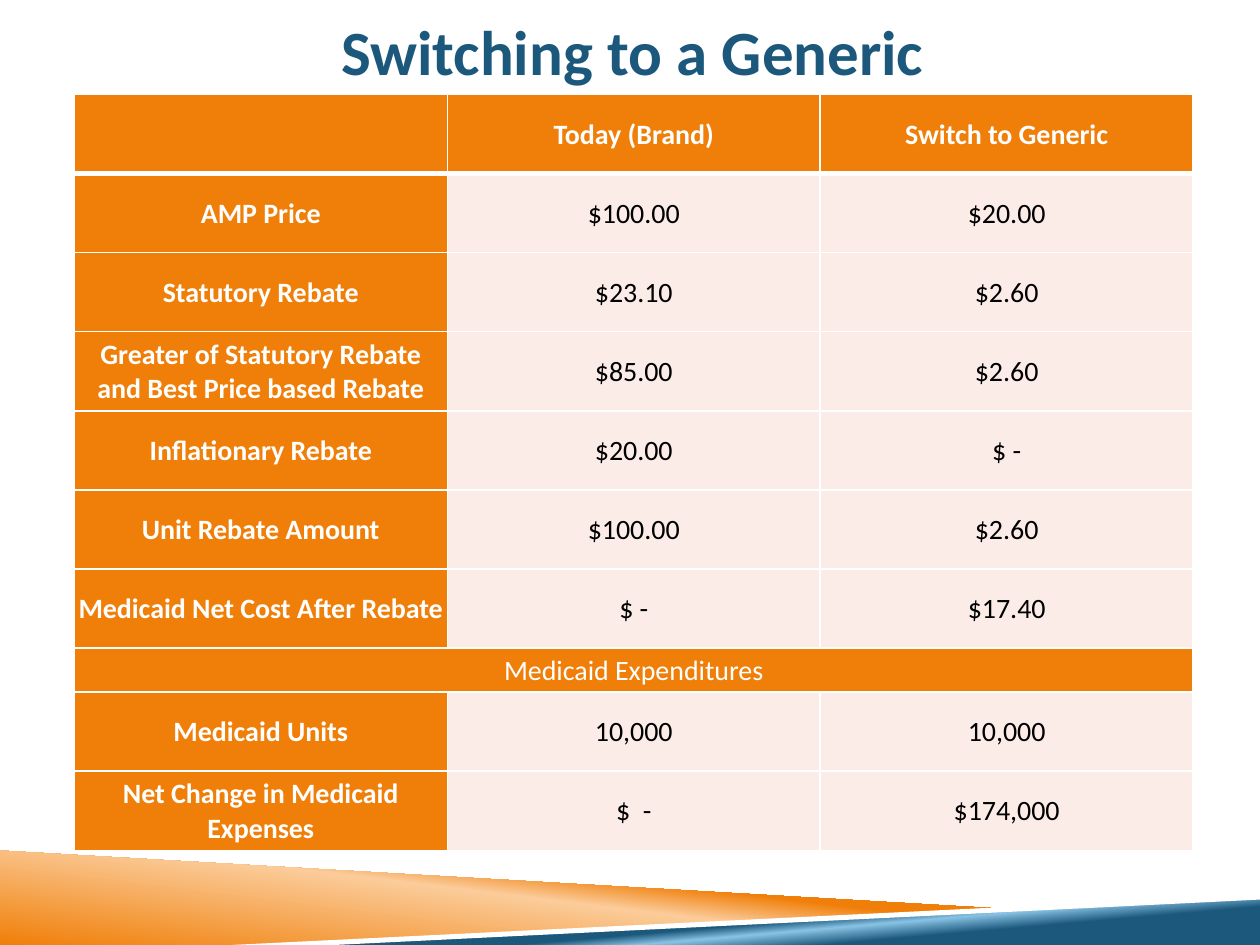
from dataclasses import dataclass

from lxml.etree import SubElement
from pptx import Presentation
from pptx.dml.color import RGBColor
from pptx.enum.text import MSO_ANCHOR, PP_ALIGN
from pptx.oxml import parse_xml
from pptx.oxml.ns import nsdecls, qn
from pptx.util import Inches, Pt


@dataclass(frozen=True)
class Theme:
    font: str = "Calibri"
    title_size: int = 36
    table_size: int = 16
    orange: str = "F07F09"
    peach: str = "FBCC9A"
    navy: str = "1B587C"
    sky: str = "89C3E5"
    blush: str = "FCECE7"
    white: str = "FFFFFF"
    black: str = "000000"


THEME = Theme()


def write(frame, text, *, size, color, bold=False):
    paragraph = frame.paragraphs[0]
    paragraph.alignment = PP_ALIGN.CENTER
    run = paragraph.add_run()
    run.text = text
    run.font.name = THEME.font
    run.font.size = Pt(size)
    run.font.bold = bold
    run.font.color.rgb = RGBColor.from_string(color)


def set_borders(cell, **widths):
    """Draw white cell borders; widths in points are keyed L, R, T and B."""
    properties = cell._tc.get_or_add_tcPr()
    for side, width in widths.items():
        line = SubElement(properties, qn(f"a:ln{side}"), w=str(Pt(width)))
        fill = SubElement(line, qn("a:solidFill"))
        SubElement(fill, qn("a:srgbClr"), val=THEME.white)


prs = Presentation()
prs.slide_width, prs.slide_height = Inches(10), Inches(7.5)
slide = prs.slides.add_slide(prs.slide_layouts[6])

# Footer wedges: outline, gradient stops (percent, colour), angle
wedges = [
    ([(0, 6.75), (7.92, 7.21), (2, 7.5), (0, 7.5)],
     [(0, THEME.orange), (52, THEME.peach), (66, THEME.orange)], 277),
    ([(1.98, 7.5), (10, 7.12), (10, 7.5)],
     [(28, THEME.navy), (40, THEME.sky), (48, THEME.navy)], 265),
    ([(10, 7.1), (1.84, 7.5), (2.66, 7.5), (10, 7.14)],
     [(0, THEME.white)], 0),
]
for outline, stops, angle in wedges:
    start, *others = [(Inches(x), Inches(y)) for x, y in outline]
    builder = slide.shapes.build_freeform(*start)
    builder.add_line_segments(others, close=True)
    wedge = builder.convert_to_shape()
    wedge.shadow.inherit = False
    wedge.line.fill.background()
    if len(stops) == 1:
        wedge.fill.solid()
        wedge.fill.fore_color.rgb = RGBColor.from_string(stops[0][1])
        continue
    stop_xml = "".join(
        f'<a:gs pos="{percent * 1000}"><a:srgbClr val="{color}"/></a:gs>'
        for percent, color in stops)
    gradient = parse_xml(
        f'<a:gradFill {nsdecls("a")} rotWithShape="1"><a:gsLst>{stop_xml}</a:gsLst>'
        f'<a:lin ang="{angle * 60000}" scaled="0"/></a:gradFill>')
    wedge._element.spPr.find(qn("a:custGeom")).addnext(gradient)

title = slide.shapes.add_textbox(
    Inches(0.71), Inches(-0.08), Inches(8.62), Inches(0.96)).text_frame
title.word_wrap = True
title.vertical_anchor = MSO_ANCHOR.MIDDLE
title.margin_left = title.margin_right = 0
write(title, "Switching to a Generic", size=THEME.title_size,
      color=THEME.navy, bold=True)

SECTION = "Medicaid Expenditures"
rows = [
    ("", "Today (Brand)", "Switch to Generic"),
    ("AMP Price", "$100.00", "$20.00"),
    ("Statutory Rebate", "$23.10", "$2.60"),
    ("Greater of Statutory Rebate and Best Price based Rebate", "$85.00", "$2.60"),
    ("Inflationary Rebate", "$20.00", "$ -"),
    ("Unit Rebate Amount", "$100.00", "$2.60"),
    ("Medicaid Net Cost After Rebate", "$ -", "$17.40"),
    (SECTION, "", ""),
    ("Medicaid Units", "10,000", "10,000"),
    ("Net Change in Medicaid Expenses", "$  -", "$174,000"),
]
table_height, section_height = 6, 0.35
row_height = (table_height - section_height) / (len(rows) - 1)
rebates = slide.shapes.add_table(
    len(rows), 3, Inches(0.59), Inches(0.75), Inches(8.88), Inches(table_height)).table

for r, values in enumerate(rows):
    is_section = values[0] == SECTION
    rebates.rows[r].height = Inches(section_height if is_section else row_height)
    for c, value in enumerate(values):
        cell = rebates.cell(r, c)
        is_heading = r == 0 or c == 0 or is_section
        set_borders(cell, L=1, R=1, T=3 if r == 1 else 1, B=3 if r == 0 else 1)
        cell.fill.solid()
        cell.fill.fore_color.rgb = RGBColor.from_string(
            THEME.orange if is_heading else THEME.blush)
        cell.vertical_anchor = MSO_ANCHOR.MIDDLE
        cell.margin_left = cell.margin_right = cell.margin_top = Inches(0.01)
        cell.margin_bottom = 0
        if value:
            write(cell.text_frame, value, size=THEME.table_size,
                  color=THEME.white if is_heading else THEME.black,
                  bold=is_heading and not is_section)
    if is_section:
        rebates.cell(r, 0).merge(rebates.cell(r, 2))

prs.save("out.pptx")
